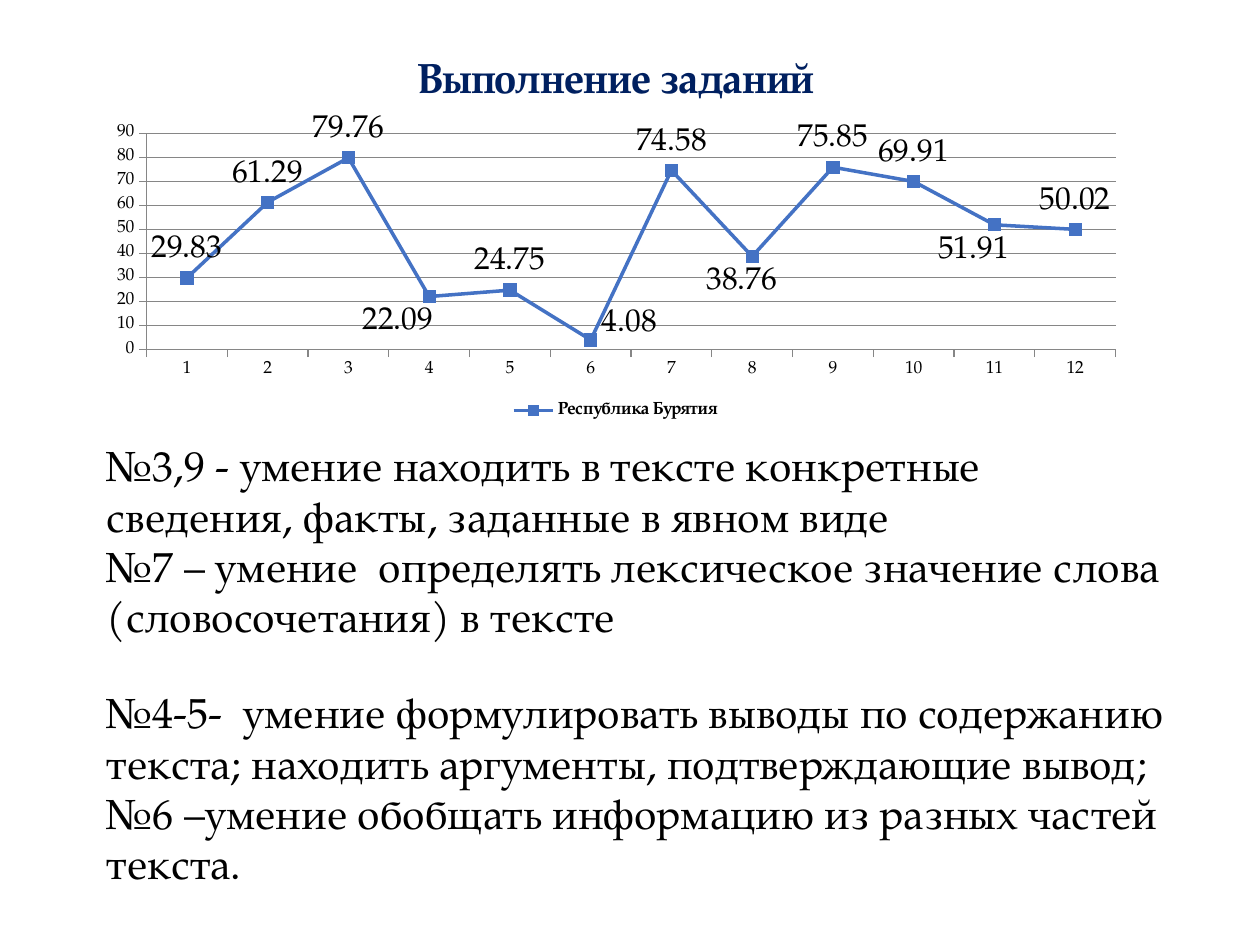
from dataclasses import dataclass

from pptx import Presentation
from pptx.chart.data import CategoryChartData
from pptx.dml.color import RGBColor
from pptx.enum.chart import XL_CHART_TYPE as ChartType
from pptx.enum.chart import XL_LABEL_POSITION as LabelPosition
from pptx.enum.chart import XL_LEGEND_POSITION as LegendPosition
from pptx.enum.chart import XL_MARKER_STYLE as MarkerStyle
from pptx.enum.chart import XL_TICK_MARK as TickMark
from pptx.enum.text import MSO_AUTO_SIZE as AutoSize
from pptx.oxml import parse_xml
from pptx.oxml.ns import nsdecls
from pptx.util import Inches, Pt


@dataclass(frozen=True)
class Theme:
    """Colours, font and type sizes of the slide."""

    font: str = "TeX Gyre Pagella"
    text: RGBColor = RGBColor(0x00, 0x00, 0x00)
    title: RGBColor = RGBColor(0x00, 0x20, 0x60)
    line: RGBColor = RGBColor(0x44, 0x72, 0xC4)
    grid: RGBColor = RGBColor(0x86, 0x86, 0x86)
    large: Pt = Pt(24)
    label: Pt = Pt(18)
    small: Pt = Pt(10)


THEME = Theme()
REGION = "Республика Бурятия"
SCORES = [29.83, 61.29, 79.76, 22.09, 24.75, 4.08,
          74.58, 38.76, 75.85, 69.91, 51.91, 50.02]
LABEL_SHIFTS = {
    3: (LabelPosition.BELOW, -0.03, 0),
    5: (LabelPosition.RIGHT, 0, -0.04),
    7: (LabelPosition.BELOW, -0.01, 0),
    10: (LabelPosition.BELOW, -0.02, 0),
}
STRONG_SKILLS = [
    "№3,9 - умение находить в тексте конкретные сведения, факты, заданные в явном виде",
    "№7 – умение  определять лексическое значение слова (словосочетания) в тексте",
]
WEAK_SKILLS = [
    "№4-5-  умение формулировать выводы по содержанию текста; находить аргументы, подтверждающие вывод;",
    "№6 –умение обобщать информацию из разных частей текста.",
]


def style_font(font, size, color=THEME.text, bold=False):
    """Apply the theme font with a size, colour and weight."""
    font.name = THEME.font
    font.size = size
    font.bold = bold
    font.color.rgb = color


def manual_layout(extra="", **values):
    """Return a chart layout element with the given fractions."""
    parts = "".join(f'<c:{name} val="{value}"/>' for name, value in values.items())
    return parse_xml(f'<c:layout {nsdecls("c")}><c:manualLayout>{extra}{parts}'
                     "</c:manualLayout></c:layout>")


def place_plot_area(chart):
    """Fix the inner plot area within the chart."""
    plot_area = chart._chartSpace.chart.plotArea
    for layout in plot_area.xpath("c:layout"):
        plot_area.remove(layout)
    modes = ('<c:layoutTarget val="inner"/><c:xMode val="edge"/>'
             '<c:yMode val="edge"/>')
    plot_area.insert(0, manual_layout(modes, x=0.05, y=0.25, w=0.93, h=0.56))


def style_axes(chart):
    """Format both axes and the horizontal gridlines."""
    for axis in (chart.category_axis, chart.value_axis):
        axis.major_tick_mark = TickMark.OUTSIDE
        axis.minor_tick_mark = TickMark.NONE
        axis.format.line.color.rgb = THEME.grid
        style_font(axis.tick_labels.font, THEME.small)
    value_axis = chart.value_axis
    value_axis.minimum_scale, value_axis.maximum_scale = 0, 90
    value_axis.major_unit = 10
    value_axis.has_major_gridlines = True
    value_axis.major_gridlines.format.line.color.rgb = THEME.grid


def style_series(series):
    """Format the score line, its markers and its value labels."""
    series.smooth = False
    series.format.line.color.rgb = THEME.line
    series.format.line.width = Pt(2)
    marker = series.marker
    marker.style, marker.size = MarkerStyle.SQUARE, 7
    marker.format.fill.solid()
    marker.format.fill.fore_color.rgb = THEME.line
    marker.format.line.color.rgb = THEME.line
    labels = series.data_labels
    labels.show_value = True
    labels.position = LabelPosition.ABOVE
    style_font(labels.font, THEME.label)
    for index, (position, x, y) in LABEL_SHIFTS.items():
        label = series.points[index].data_label
        style_font(label.font, THEME.label)
        label.position = position
        element = series._element.xpath(f"c:dLbls/c:dLbl[c:idx/@val={index}]")[0]
        element.insert(1, manual_layout(x=x, y=y))


def add_score_chart(slide, box):
    """Add the titled line chart of scores by task."""
    data = CategoryChartData()
    data.categories = [str(task) for task in range(1, len(SCORES) + 1)]
    data.add_series(REGION, SCORES)
    chart = slide.shapes.add_chart(
        ChartType.LINE_MARKERS, *map(Inches, box), data).chart
    style_font(chart.font, THEME.small)
    chart.plots[0].vary_by_categories = False
    chart.has_title = True
    title = chart.chart_title.text_frame
    title.text = "Выполнение заданий"
    style_font(title.paragraphs[0].font, THEME.large, THEME.title, bold=True)
    chart.chart_title.include_in_layout = False
    chart.has_legend = True
    chart.legend.position = LegendPosition.BOTTOM
    chart.legend.include_in_layout = False
    style_font(chart.legend.font, THEME.small, bold=True)
    place_plot_area(chart)
    style_axes(chart)
    style_series(chart.plots[0].series[0])


def add_skills(slide, box, skills):
    """Add a text box with one paragraph for each skill."""
    frame = slide.shapes.add_textbox(*map(Inches, box)).text_frame
    frame.word_wrap = True
    frame.auto_size = AutoSize.SHAPE_TO_FIT_TEXT
    for index, skill in enumerate(skills):
        paragraph = frame.add_paragraph() if index else frame.paragraphs[0]
        paragraph.text = skill
        style_font(paragraph.font, THEME.large)


def main():
    """Build and save the slide."""
    presentation = Presentation()
    presentation.slide_width = Inches(10)
    presentation.slide_height = Inches(7.5)
    slide = presentation.slides.add_slide(presentation.slide_layouts[6])
    add_score_chart(slide, (0.75, 0.29, 8.27, 3.07))
    add_skills(slide, (0.75, 3.44, 8.58, 2.32), STRONG_SKILLS)
    add_skills(slide, (0.75, 5.4, 8.74, 1.72), WEAK_SKILLS)
    presentation.save("out.pptx")


if __name__ == "__main__":
    main()
